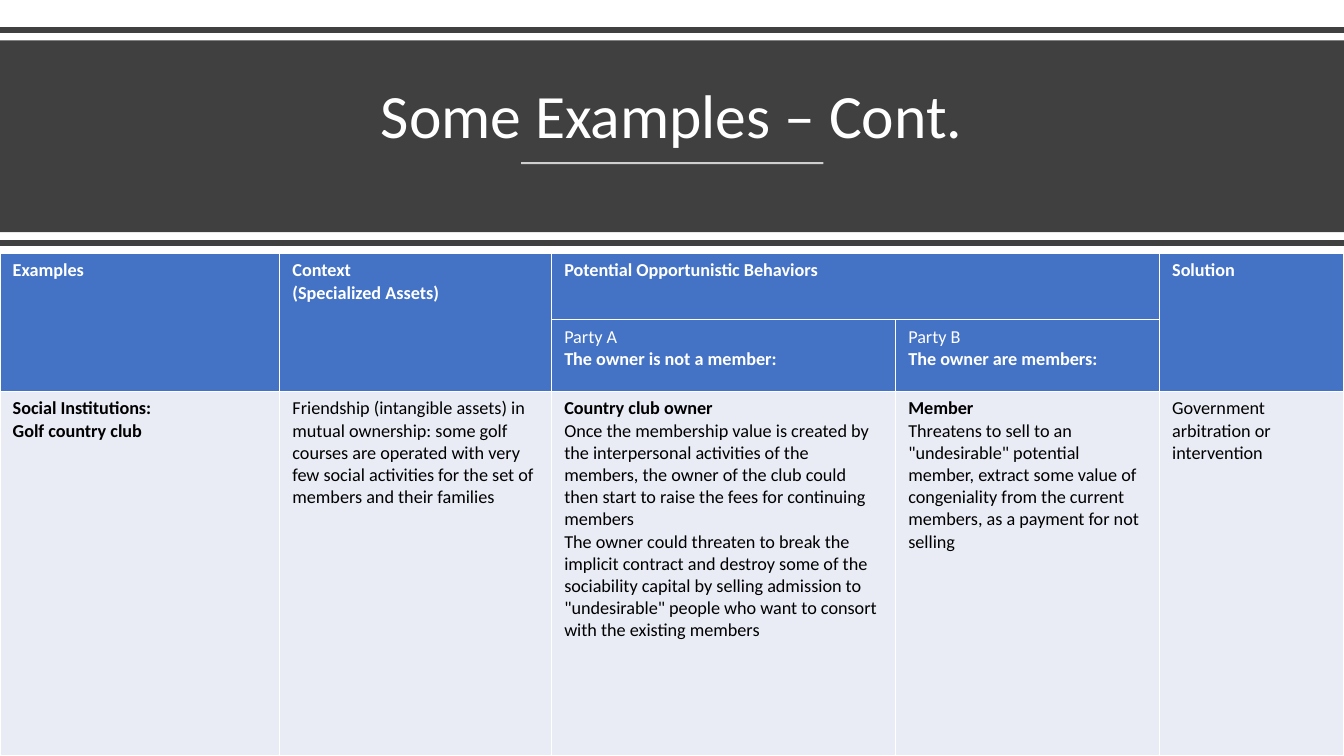
import dataclasses
import itertools

import lxml.etree
import pptx
import pptx.dml.color
import pptx.enum.shapes
import pptx.enum.text
import pptx.oxml.ns
import pptx.shapes.connector
import pptx.slide
import pptx.table
import pptx.text.text
import pptx.util

Cm = pptx.util.Cm
Pt = pptx.util.Pt
Color = pptx.dml.color.RGBColor
qn = pptx.oxml.ns.qn

DARK = Color(0x40, 0x40, 0x40)
WHITE = Color(0xFF, 0xFF, 0xFF)
BLACK = Color(0x00, 0x00, 0x00)
BLUE = Color(0x44, 0x72, 0xC4)
PALE = Color(0xE9, 0xEB, 0xF5)
FONT = "Calibri"
WIDTH = 33.87
COLS = (7.05, 6.85, 8.67, 6.65, 4.64)
ROWS = (1.68, 1.8, 9.18)


@dataclasses.dataclass(frozen=True)
class Rule:
    left: float
    right: float
    top: float
    weight: float
    color: Color
    alpha: int = 100


@dataclasses.dataclass(frozen=True)
class Entry:
    row: int
    col: int
    head: tuple[str, ...] = ()
    body: tuple[str, ...] = ()
    tall: int = 1
    wide: int = 1
    plain: bool = False


RULES = (
    Rule(0, WIDTH, 0.76, 4, DARK),
    Rule(13.13, 20.75, 4.11, 1.5, WHITE, 75),
    Rule(0, WIDTH, 6.12, 4, DARK),
)

ENTRIES = (
    Entry(0, 0, ("Examples",), tall=2),
    Entry(0, 1, ("Context", "(Specialized Assets)"), tall=2),
    Entry(0, 2, ("Potential Opportunistic Behaviors",), wide=2),
    Entry(0, 4, ("Solution",), tall=2),
    Entry(1, 2, ("The owner is not a member:",), ("Party A",), plain=True),
    Entry(1, 3, ("The owner are members:",), ("Party B",), plain=True),
    Entry(2, 0, ("Social Institutions:", "Golf country club")),
    Entry(2, 1, body=(
        "Friendship (intangible assets) in mutual ownership: some golf courses are operated "
        "with very few social activities for the set of members and their families",)),
    Entry(2, 2, ("Country club owner",), (
        "Once the membership value is created by the interpersonal activities of the members, "
        "the owner of the club could then start to raise the fees for continuing members",
        "The owner could threaten to break the implicit contract and destroy some of the "
        "sociability capital by selling admission to \"undesirable\" people who want to "
        "consort with the existing members")),
    Entry(2, 3, ("Member",), (
        "Threatens to sell to an \"undesirable\" potential member, extract some value of "
        "congeniality from the current members, as a payment for not selling",)),
    Entry(2, 4, body=("Government arbitration or intervention",)),
)


def style(para: pptx.text.text._Paragraph, size: float, color: Color, bold: bool) -> None:
    para.font.name = FONT
    para.font.size = Pt(size)
    para.font.bold = bold
    para.font.color.rgb = color


def draw_rule(slide: pptx.slide.Slide, rule: Rule) -> None:
    line = slide.shapes.add_connector(
        pptx.enum.shapes.MSO_CONNECTOR.STRAIGHT,
        Cm(rule.left), Cm(rule.top), Cm(rule.right), Cm(rule.top))
    line.line.width = Pt(rule.weight)
    line.line.color.rgb = rule.color
    props = line._element.spPr
    if rule.alpha < 100:
        tint = props.find(".//" + qn("a:srgbClr"))
        lxml.etree.SubElement(tint, qn("a:alpha"), val=str(rule.alpha * 1000))
    lxml.etree.SubElement(props, qn("a:effectLst"))


def draw_band(slide: pptx.slide.Slide) -> None:
    band = slide.shapes.add_shape(
        pptx.enum.shapes.MSO_SHAPE.RECTANGLE, 0, Cm(1.02), Cm(WIDTH), Cm(4.83))
    band.shadow.inherit = False
    band.fill.solid()
    band.fill.fore_color.rgb = DARK
    band.line.fill.background()


def draw_title(slide: pptx.slide.Slide) -> None:
    frame = slide.shapes.add_textbox(0, Cm(1.37), Cm(WIDTH), Cm(2.59)).text_frame
    frame.word_wrap = True
    frame.vertical_anchor = pptx.enum.text.MSO_ANCHOR.BOTTOM
    para = frame.paragraphs[0]
    para.text = "Some Examples – Cont."
    para.alignment = pptx.enum.text.PP_ALIGN.CENTER
    para.line_spacing = 0.9
    style(para, 44, WHITE, False)


def paint(cell: pptx.table._Cell, color: Color) -> None:
    props = cell._tc.get_or_add_tcPr()
    for side in ("a:lnL", "a:lnR", "a:lnT", "a:lnB"):
        edge = lxml.etree.SubElement(props, qn(side), w=str(Pt(1)))
        fill = lxml.etree.SubElement(edge, qn("a:solidFill"))
        lxml.etree.SubElement(fill, qn("a:srgbClr"), val=str(WHITE))
    cell.fill.solid()
    cell.fill.fore_color.rgb = color
    cell.margin_left = cell.margin_right = Cm(0.32)
    cell.margin_top = cell.margin_bottom = Cm(0.16)


def write(table: pptx.table.Table, entry: Entry) -> None:
    cell = table.cell(entry.row, entry.col)
    if entry.tall > 1 or entry.wide > 1:
        cell.merge(table.cell(entry.row + entry.tall - 1, entry.col + entry.wide - 1))
    bold = [(text, True) for text in entry.head]
    thin = [(text, False) for text in entry.body]
    lines = thin + bold if entry.plain else bold + thin
    cell.text = "\n".join(text for text, _ in lines)
    color = WHITE if entry.row < 2 else BLACK
    for para, (_, heavy) in zip(cell.text_frame.paragraphs, lines):
        style(para, 13, color, heavy)


def draw_table(slide: pptx.slide.Slide) -> None:
    table = slide.shapes.add_table(
        len(ROWS), len(COLS), 0, Cm(6.38), Cm(WIDTH), Cm(sum(ROWS))).table
    for col, width in zip(table.columns, COLS):
        col.width = Cm(width)
    for row, height in zip(table.rows, ROWS):
        row.height = Cm(height)
    for row, col in itertools.product(range(len(ROWS)), range(len(COLS))):
        paint(table.cell(row, col), BLUE if row < 2 else PALE)
    for entry in ENTRIES:
        write(table, entry)


def main() -> None:
    deck = pptx.Presentation()
    deck.slide_width = Cm(WIDTH)
    deck.slide_height = Cm(19.05)
    slide = deck.slides.add_slide(deck.slide_layouts[6])
    draw_band(slide)
    draw_title(slide)
    for rule in RULES:
        draw_rule(slide, rule)
    draw_table(slide)
    deck.save("out.pptx")


if __name__ == "__main__":
    main()
